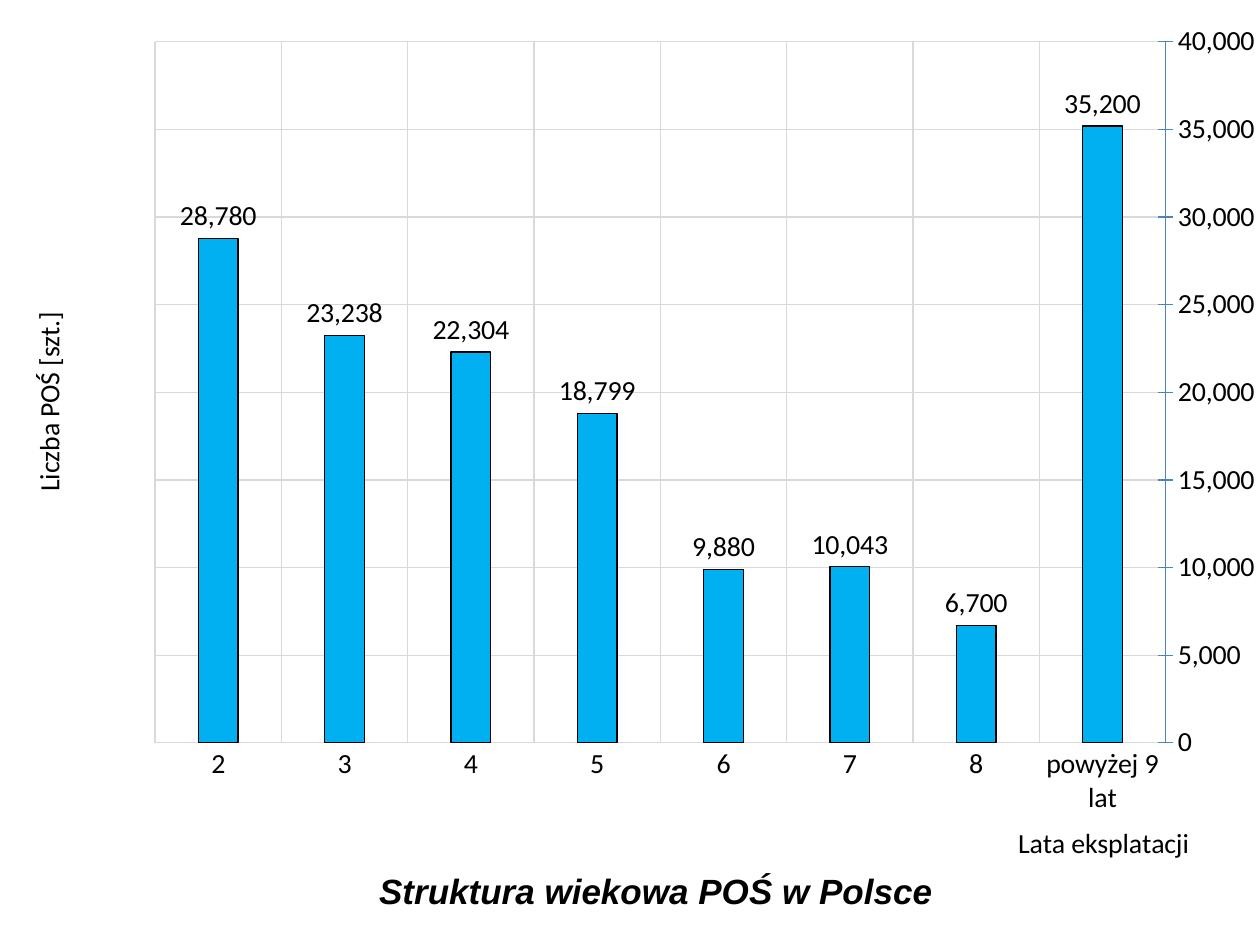
from lxml import etree
from pptx import Presentation
from pptx.chart.data import CategoryChartData
from pptx.dml.color import RGBColor
from pptx.enum.chart import XL_CHART_TYPE, XL_LABEL_POSITION, XL_TICK_MARK
from pptx.enum.text import MSO_ANCHOR, PP_ALIGN
from pptx.oxml.ns import qn
from pptx.util import Pt

COLUMNS = XL_CHART_TYPE.COLUMN_CLUSTERED
OUTSIDE = XL_LABEL_POSITION.OUTSIDE_END
NO_TICK, CROSS_TICK = XL_TICK_MARK.NONE, XL_TICK_MARK.CROSS
MIDDLE, CENTER = MSO_ANCHOR.MIDDLE, PP_ALIGN.CENTER

BLACK, GRID_GREY, AXIS_BLUE, BAR_BLUE = "000000", "D9D9D9", "4F81BD", "00B0F0"
NUMBER_FORMAT = "#,##0"

# Listed from right to left, since the category axis is reversed
SYSTEMS_BY_AGE = {
    "powyżej 9 lat": 35200,
    "8": 6700,
    "7": 10043,
    "6": 9880,
    "5": 18799,
    "4": 22304,
    "3": 23238,
    "2": 28780,
}


def rgb(hex_color):
    return RGBColor.from_string(hex_color)


def style_font(font, size=16, face="Calibri", color=BLACK, bold=False, italic=False):
    font.size, font.name = Pt(size), face
    font.bold, font.italic = bold, italic
    font.color.rgb = rgb(color)


def write_text(frame, text, align=CENTER, **font_format):
    paragraph = frame.paragraphs[0]
    paragraph.alignment = align
    run = paragraph.add_run()
    run.text = text
    style_font(run.font, **font_format)


def style_line(line, color):
    line.color.rgb = rgb(color)
    line.width = Pt(0.75)


def set_layout(layout, **settings):
    """Fill a c:layout element with manual settings, in schema order."""
    for child in list(layout):
        layout.remove(child)
    manual = etree.SubElement(layout, qn("c:manualLayout"))
    for tag, value in settings.items():
        etree.SubElement(manual, qn(f"c:{tag}")).set("val", str(value))


def style_axis(axis, line_color, tick):
    axis.has_major_gridlines = True
    style_line(axis.major_gridlines.format.line, GRID_GREY)
    style_line(axis.format.line, line_color)
    axis.major_tick_mark, axis.minor_tick_mark = tick, NO_TICK
    style_font(axis.tick_labels.font)


def add_axis_title(axis, text, x, y, rotation=0):
    axis.has_title = True
    title = axis.axis_title
    write_text(title.text_frame, text)
    title.text_frame._txBody.bodyPr.set("rot", str(rotation * 60000))
    element = title._element
    layout = element.find(qn("c:layout"))
    if layout is None:
        layout = etree.Element(qn("c:layout"))
        element.find(qn("c:tx")).addnext(layout)
    set_layout(layout, xMode="edge", yMode="edge", x=x, y=y)


def add_age_chart(slide, left, top, width, height):
    data = CategoryChartData(number_format=NUMBER_FORMAT)
    data.categories = list(SYSTEMS_BY_AGE)
    data.add_series("Liczba POŚ", list(SYSTEMS_BY_AGE.values()))
    chart = slide.shapes.add_chart(
        COLUMNS, Pt(left), Pt(top), Pt(width), Pt(height), data
    ).chart
    chart.has_title = chart.has_legend = False
    style_font(chart.font)

    # Plot area
    plot_area = chart._chartSpace.chart.plotArea
    layout = plot_area.find(qn("c:layout"))
    if layout is None:
        layout = etree.Element(qn("c:layout"))
        plot_area.insert(0, layout)
    set_layout(layout, layoutTarget="inner", xMode="edge", yMode="edge",
               x=0.124, y=0.03, w=0.808, h=0.83)

    # Columns and their labels
    plot = chart.plots[0]
    plot.vary_by_categories = False
    plot.gap_width, plot.overlap = 219, -27
    columns = plot.series[0]
    columns.format.fill.solid()
    columns.format.fill.fore_color.rgb = rgb(BAR_BLUE)
    style_line(columns.format.line, BLACK)
    labels = columns.data_labels
    labels.show_value = True
    labels.position = OUTSIDE
    labels.number_format, labels.number_format_is_linked = NUMBER_FORMAT, False
    style_font(labels.font)

    # Axes
    ages, counts = chart.category_axis, chart.value_axis
    style_axis(ages, GRID_GREY, NO_TICK)
    ages.reverse_order = True
    add_axis_title(ages, "Lata eksplatacji", x=0.81, y=0.95)
    style_axis(counts, AXIS_BLUE, CROSS_TICK)
    counts.minimum_scale, counts.maximum_scale, counts.major_unit = 0, 40000, 5000
    counts.tick_labels.number_format = NUMBER_FORMAT
    counts.tick_labels.number_format_is_linked = False
    add_axis_title(counts, "Liczba POŚ [szt.]", x=0.02, y=0.345, rotation=-90)


def add_caption(slide, left, top, width, height):
    frame = slide.shapes.add_textbox(Pt(left), Pt(top), Pt(width), Pt(height)).text_frame
    frame.word_wrap = True
    frame.vertical_anchor = MIDDLE
    write_text(frame, "Struktura wiekowa POŚ w Polsce",
               size=20, face="Arial", bold=True, italic=True)


def main():
    presentation = Presentation()
    presentation.slide_width, presentation.slide_height = Pt(720), Pt(540)
    slide = presentation.slides.add_slide(presentation.slide_layouts[6])
    add_caption(slide, 28.8, 480.2, 691.9, 56.9)
    add_age_chart(slide, 0, 9.4, 717.1, 487.4)
    presentation.save("out.pptx")


if __name__ == "__main__":
    main()
